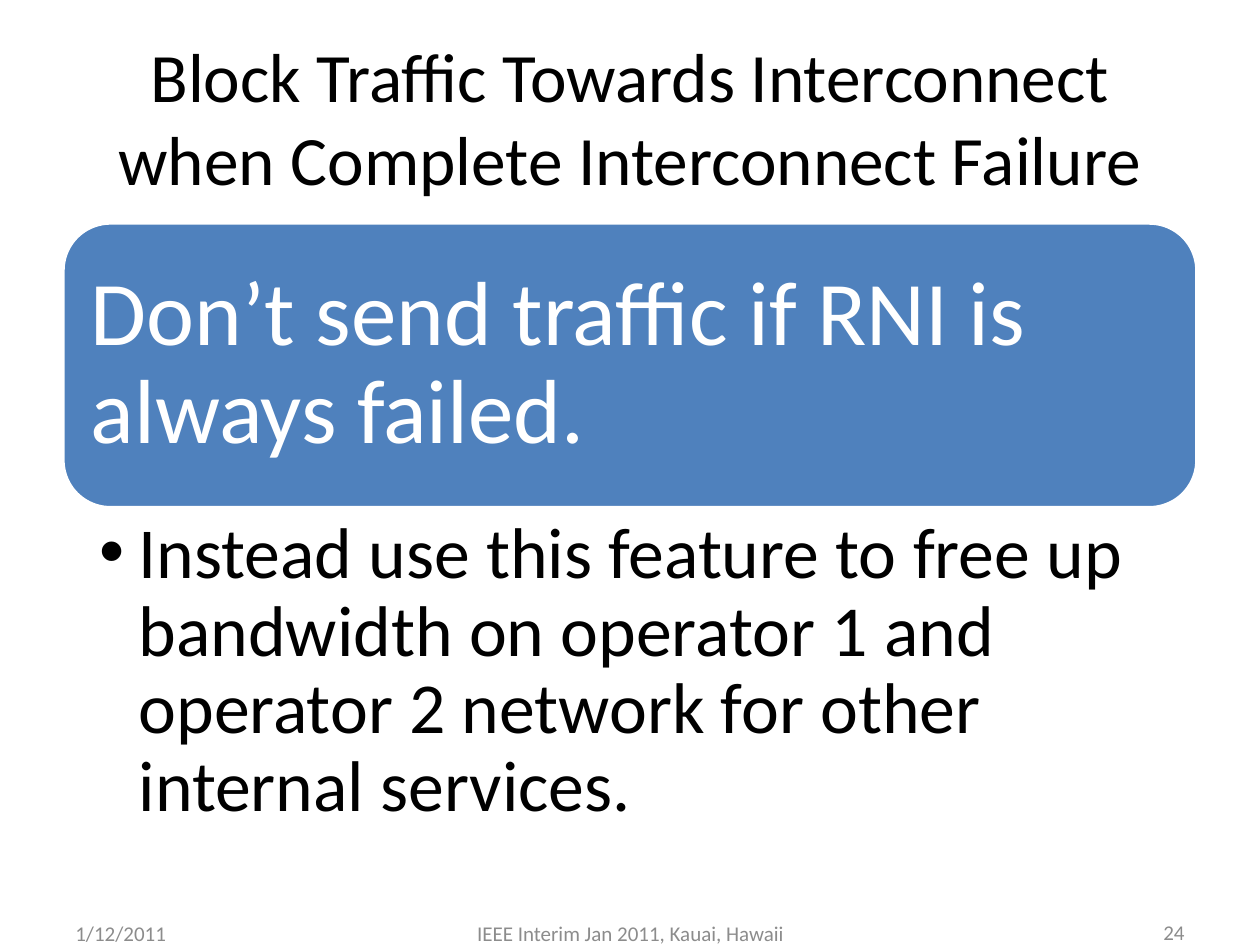
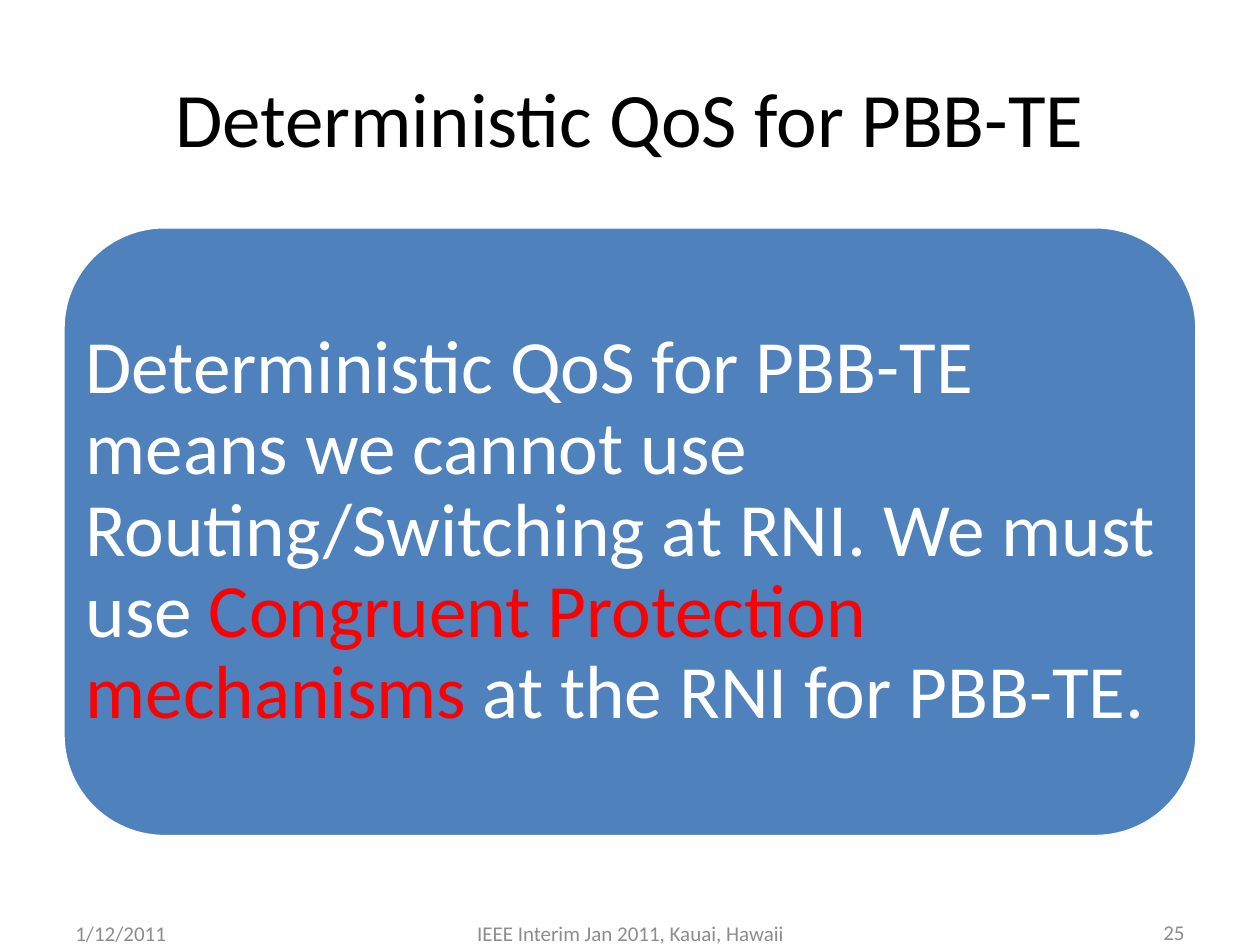
from pptx import Presentation
from pptx.dml.color import RGBColor
from pptx.enum.shapes import MSO_SHAPE as Preset
from pptx.enum.text import MSO_ANCHOR as Anchor, MSO_AUTO_SIZE as AutoSize, PP_ALIGN as Align
from pptx.util import Inches, Pt

BLACK, WHITE, BLUE, RED, GREY = "000000", "FFFFFF", "4F81BD", "FF0000", "8C8C8C"
FONT = "Calibri"
LEFT, WIDTH = 0.5, 9
FOOTER_HEIGHT = 0.4
TITLE_AND_CONTENT, TITLE_ONLY = 1, 5


def color(value):
    return RGBColor.from_string(value)


def apply(target, values):
    for name, value in values.items():
        setattr(target, name, value)


def place(shape, left, top, width, height):
    apply(shape, {
        "left": Inches(left), "top": Inches(top),
        "width": Inches(width), "height": Inches(height),
    })


def format_frame(frame, anchor, insets=(0.1, 0.05, 0.1, 0.05)):
    sides = ("margin_left", "margin_top", "margin_right", "margin_bottom")
    apply(frame, {"word_wrap": True, "auto_size": AutoSize.NONE, "vertical_anchor": anchor})
    apply(frame, {side: Inches(inset) for side, inset in zip(sides, insets)})


def write(paragraph, runs, size, **paragraph_format):
    apply(paragraph, paragraph_format)
    for text, run_color in runs:
        run = paragraph.add_run()
        run.text = text
        apply(run.font, {"name": FONT, "size": Pt(size)})
        run.font.color.rgb = color(run_color)


def add_text(slide, box, runs, size, insets=(0.1, 0.05, 0.1, 0.05), **paragraph_format):
    frame = slide.shapes.add_textbox(*map(Inches, box)).text_frame
    format_frame(frame, Anchor.MIDDLE, insets)
    write(frame.paragraphs[0], runs, size, **paragraph_format)


def add_title(slide, text, size):
    title = slide.shapes.title
    place(title, LEFT, 0.3, WIDTH, 1.25)
    format_frame(title.text_frame, Anchor.MIDDLE)
    write(title.text_frame.paragraphs[0], [(text, BLACK)], size, alignment=Align.CENTER)


def add_panel(slide, top, height, runs, size, inset):
    box = (LEFT, top, WIDTH, height)
    panel = slide.shapes.add_shape(Preset.ROUNDED_RECTANGLE, *map(Inches, box))
    panel.shadow.inherit = False
    panel.fill.solid()
    panel.fill.fore_color.rgb = color(BLUE)
    panel.line.color.rgb = color(WHITE)
    panel.line.width = Pt(2)
    add_text(slide, box, runs, size, (inset,) * 4,
             line_spacing=0.9, space_after=Pt(round(size * 0.35)))


def add_bullet(slide, text, size):
    body = slide.placeholders[1]
    place(body, LEFT, 4.03, WIDTH, 2.65)
    format_frame(body.text_frame, Anchor.TOP, (0.29, 0.07, 0.4, 0.07))
    paragraph = body.text_frame.paragraphs[0]
    write(paragraph, [(text, BLACK)], size, line_spacing=0.9,
          space_before=Pt(0), space_after=Pt(round(size * 0.2)))
    indent = Inches(0.31)
    properties = paragraph._p.get_or_add_pPr()
    properties.set("marL", str(indent))
    properties.set("indent", str(-indent))


def add_footer(slide, number):
    parts = (
        ((0.5, 7.21, 2.33), "1/12/2011", Align.LEFT),
        ((3.42, 7.21, 3.17), "IEEE Interim Jan 2011, Kauai, Hawaii", Align.CENTER),
        ((7.17, 7.2, 2.33), str(number), Align.RIGHT),
    )
    for position, text, alignment in parts:
        add_text(slide, (*position, FOOTER_HEIGHT), [(text, GREY)], 12, alignment=alignment)


def add_slide(presentation, layout, title, title_size, number):
    slide = presentation.slides.add_slide(presentation.slide_layouts[layout])
    add_title(slide, title, title_size)
    add_footer(slide, number)
    return slide


def main():
    presentation = Presentation()
    apply(presentation, {"slide_width": Inches(10), "slide_height": Inches(7.5)})

    blocking = add_slide(
        presentation, TITLE_AND_CONTENT,
        "Block Traffic Towards Interconnect when Complete Interconnect Failure", 39.6, 24)
    add_panel(blocking, 1.77, 2.26,
              [("Don’t send traffic if RNI is always failed.", WHITE)], 52, 0.22)
    add_bullet(
        blocking,
        "Instead use this feature to free up bandwidth on operator 1 and "
        "operator 2 network for other internal services.", 41)

    quality = add_slide(presentation, TITLE_ONLY, "Deterministic QoS for PBB-TE", 44, 25)
    add_panel(quality, 1.8, 4.84, [
        ("Deterministic QoS for PBB-TE means we cannot use "
         "Routing/Switching at RNI. We must use ", WHITE),
        ("Congruent Protection mechanisms", RED),
        (" at the RNI for PBB-TE.", WHITE),
    ], 43, 0.18)

    presentation.save("out.pptx")


if __name__ == "__main__":
    main()
